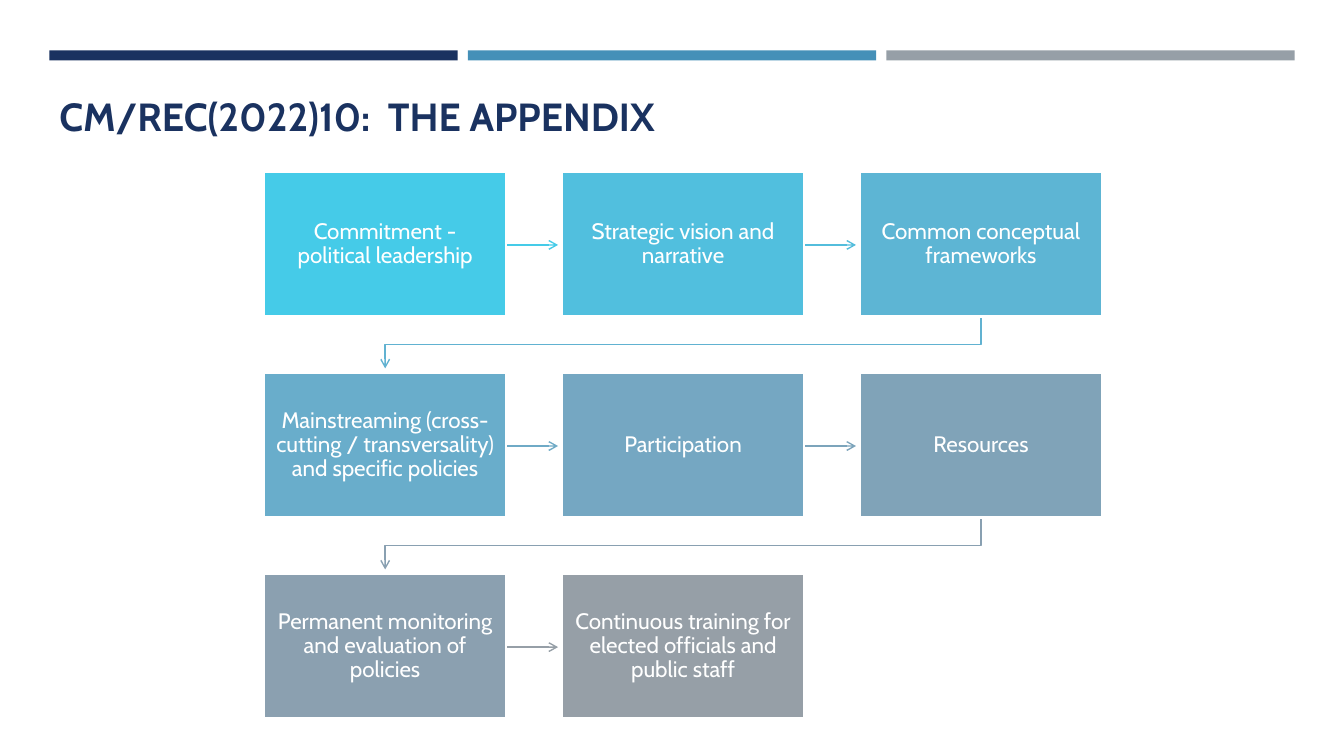
from dataclasses import dataclass

from lxml import etree
from pptx import Presentation
from pptx.dml.color import RGBColor
from pptx.enum.shapes import MSO_CONNECTOR, MSO_SHAPE
from pptx.enum.text import MSO_ANCHOR, PP_ALIGN
from pptx.oxml.ns import qn
from pptx.util import Inches, Pt

RECT = MSO_SHAPE.RECTANGLE
STRAIGHT = MSO_CONNECTOR.STRAIGHT
MIDDLE, BOTTOM = MSO_ANCHOR.MIDDLE, MSO_ANCHOR.BOTTOM
LEFT, CENTER = PP_ALIGN.LEFT, PP_ALIGN.CENTER


@dataclass(frozen=True)
class Theme:
    font: str = "Cabin"
    navy: str = "1A3260"
    blue: str = "4590B8"
    gray: str = "969FA7"
    white: str = "FFFFFF"
    title: int = 28
    body: int = 16
    edge: float = 1.75
    arrow: float = 1


THEME = Theme()

STEPS = [
    ("Commitment - political leadership", "45CBE8", "45CBE8"),
    ("Strategic vision and narrative", "51BFDE", "53BDDC"),
    ("Common conceptual frameworks", "5DB5D4", "61B2D1"),
    ("Mainstreaming (cross-cutting / transversality) and specific policies",
     "69ADCB", "6FAAC6"),
    ("Participation", "75A7C2", "7CA4BB"),
    ("Resources", "80A3B8", "89A0B1"),
    ("Permanent monitoring and evaluation of policies", "8BA0B0", "969FA7"),
    ("Continuous training for elected officials and public staff",
     "969FA7", None),
]


def color(code):
    return RGBColor.from_string(code)


def write(shape, text, size, tint, bold=False, align=LEFT, anchor=MIDDLE,
          inset=(0.1, 0.05), lead=None):
    frame = shape.text_frame
    frame.word_wrap = True
    frame.vertical_anchor = anchor
    frame.margin_left = frame.margin_right = Inches(inset[0])
    frame.margin_top = frame.margin_bottom = Inches(inset[1])
    para = frame.paragraphs[0]
    para.alignment = align
    para.line_spacing = lead
    run = para.add_run()
    run.text = text
    run.font.name = THEME.font
    run.font.size = Pt(size)
    run.font.bold = bold
    run.font.color.rgb = color(tint)


def block(slide, box, fill, edge=None):
    shape = slide.shapes.add_shape(RECT, *map(Inches, box))
    shape.shadow.inherit = False
    shape.fill.solid()
    shape.fill.fore_color.rgb = color(fill)
    if edge:
        shape.line.color.rgb = color(edge)
        shape.line.width = Pt(THEME.edge)
    else:
        shape.line.fill.background()
    return shape


def arrow(slide, points, tint):
    spots = [(Inches(x), Inches(y)) for x, y in points]
    if len(spots) == 2:
        shape = slide.shapes.add_connector(STRAIGHT, *spots[0], *spots[1])
        etree.SubElement(shape._element.spPr, qn("a:effectLst"))
    else:
        path = slide.shapes.build_freeform(*spots[0])
        path.add_line_segments(spots[1:], close=False)
        shape = path.convert_to_shape()
        shape.shadow.inherit = False
        shape.fill.background()
    shape.line.color.rgb = color(tint)
    shape.line.width = Pt(THEME.arrow)
    etree.SubElement(shape.line._get_or_add_ln(), qn("a:tailEnd"), type="arrow")


def header(slide, box):
    left, top, width, height = box
    gap = 0.1
    bar = (width - 2 * gap) / 3
    for i, tint in enumerate((THEME.navy, THEME.blue, THEME.gray)):
        block(slide, (left + i * (bar + gap), top, bar, 0.1), tint)
    title = slide.shapes.add_textbox(*map(Inches, box))
    write(title, "CM/REC(2022)10:  THE APPENDIX", THEME.title, THEME.navy,
          bold=True, anchor=BOTTOM)


def flow(slide, box, cols=3, rows=3):
    left, top, width, height = box
    wide, high = 2.4, 1.44
    across = (width - wide) / (cols - 1)
    down = (height - high) / (rows - 1)
    for i, (text, fill, tint) in enumerate(STEPS):
        row, col = divmod(i, cols)
        x, y = left + col * across, top + row * down
        if tint and col < cols - 1:
            mid = y + high / 2 + 0.01
            arrow(slide, [(x + wide, mid), (x + across - 0.04, mid)], tint)
        elif tint:
            start, end = x + wide / 2, left + wide / 2
            base, turn = y + high, (y + high + y + down) / 2
            arrow(slide, [(start, base), (start, turn), (end, turn),
                          (end, y + down - 0.04)], tint)
        step = block(slide, (x, y, wide, high), fill, THEME.white)
        write(step, text, THEME.body, THEME.white, align=CENTER,
              inset=(0.12, 0.12), lead=0.9)


def main():
    deck = Presentation()
    deck.slide_width, deck.slide_height = Inches(13.33), Inches(7.5)
    slide = deck.slides.add_slide(deck.slide_layouts[6])
    header(slide, (0.49, 0.5, 12.35, 0.93))
    flow(slide, (2.62, 1.7, 8.31, 5.43))
    deck.save("out.pptx")


if __name__ == "__main__":
    main()
